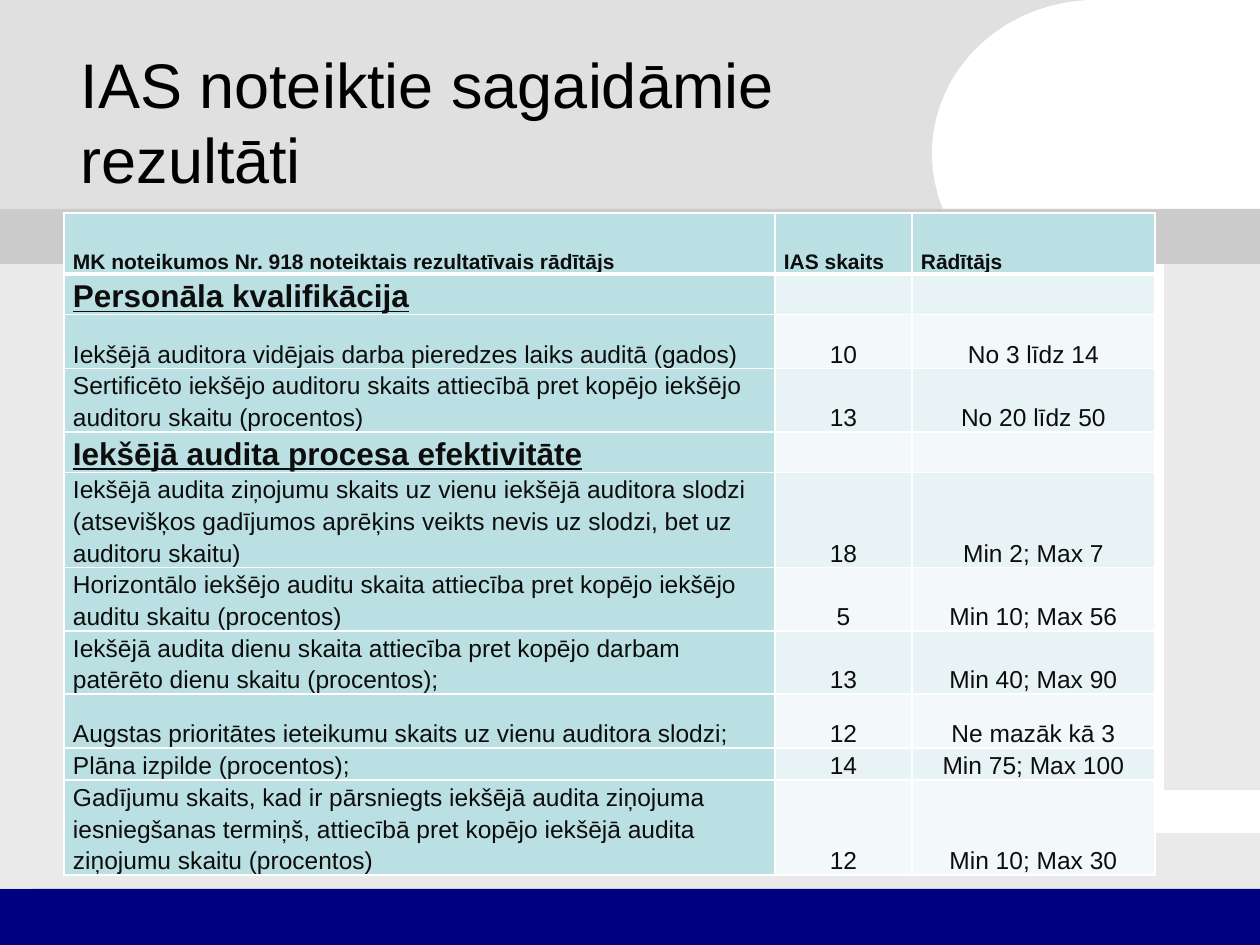
from dataclasses import dataclass

from lxml import etree
from pptx import Presentation
from pptx.dml.color import RGBColor
from pptx.enum.shapes import MSO_SHAPE
from pptx.enum.text import MSO_ANCHOR, MSO_AUTO_SIZE, PP_ALIGN
from pptx.oxml.ns import qn
from pptx.util import Pt

RECTANGLE, ELLIPSE = MSO_SHAPE.RECTANGLE, MSO_SHAPE.OVAL
MIDDLE, BOTTOM = MSO_ANCHOR.MIDDLE, MSO_ANCHOR.BOTTOM
LEFT, CENTER = PP_ALIGN.LEFT, PP_ALIGN.CENTER
NO_AUTOFIT = MSO_AUTO_SIZE.NONE

PIXELS_PER_INCH = 126
SLIDE_BOX = (0, 0, 1260, 945)
TITLE_BOX = (68, 42, 932, 158)
TABLE_BOX = (64, 213, 1091, 661)


@dataclass(frozen=True)
class Theme:
    font: str = "Arial"
    title_size: int = 36
    section_size: int = 18
    body_size: int = 14
    header_size: int = 12
    title: str = "000000"
    text: str = "0D0D0D"
    white: str = "FFFFFF"
    top_panel: str = "E0E0E0"
    side_panel: str = "EAEAEA"
    band: str = "CBCBCB"
    footer: str = "000080"
    label_fill: str = "BBE0E3"
    value_fills: tuple = ("E7F3F4", "F3F9FA")


THEME = Theme()

COLUMN_WIDTHS = [711, 137, 243]
HEADER = ("MK noteikumos Nr. 918 noteiktais rezultatīvais rādītājs", "IAS skaits", "Rādītājs")
HEADER_HEIGHT = 61
# Row height, indicator, number of units, result; a section has only a name
ROWS = [
    (40, "Personāla kvalifikācija", "", ""),
    (54, "Iekšējā auditora vidējais darba pieredzes laiks auditā (gados)", "10", "No 3 līdz 14"),
    (63, "Sertificēto iekšējo auditoru skaits attiecībā pret kopējo iekšējo "
         "auditoru skaitu (procentos)", "13", "No 20 līdz 50"),
    (40, "Iekšējā audita procesa efektivitāte", "", ""),
    (95, "Iekšējā audita ziņojumu skaits uz vienu iekšējā auditora slodzi (atsevišķos "
         "gadījumos aprēķins veikts nevis uz slodzi, bet uz auditoru skaitu)",
     "18", "Min 2; Max 7"),
    (63, "Horizontālo iekšējo auditu skaita attiecība pret kopējo iekšējo "
         "auditu skaitu (procentos)", "5", "Min 10; Max 56"),
    (63, "Iekšējā audita dienu skaita attiecība pret kopējo darbam patērēto "
         "dienu skaitu (procentos);", "13", "Min 40; Max 90"),
    (54, "Augstas prioritātes ieteikumu skaits uz vienu auditora slodzi;",
     "12", "Ne mazāk kā 3"),
    (32, "Plāna izpilde (procentos);", "14", "Min 75; Max 100"),
    (95, "Gadījumu skaits, kad ir pārsniegts iekšējā audita ziņojuma iesniegšanas "
         "termiņš, attiecībā pret kopējo iekšējā audita ziņojumu skaitu (procentos)",
     "12", "Min 10; Max 30"),
]


def px(length):
    return round(length * 914400 / PIXELS_PER_INCH)


def style_runs(paragraph, size, color, bold=False, underline=False):
    for run in paragraph.runs:
        run.font.name = THEME.font
        run.font.size = Pt(size)
        run.font.bold = bold
        run.font.underline = underline
        run.font.color.rgb = RGBColor.from_string(color)


def add_backdrop(slide, box):
    left, top, width, height = box
    panels = [
        (RECTANGLE, 0, 0, 1145, 213, THEME.top_panel),
        (ELLIPSE, 932, 0, 328, 307, THEME.white),
        (RECTANGLE, 0, 264, 70, 624, THEME.side_panel),
        (RECTANGLE, 33, 833, width - 33, 56, THEME.side_panel),
        (RECTANGLE, 0, 889, width, height - 889, THEME.footer),
        (RECTANGLE, 1164, 264, width - 1164, 526, THEME.side_panel),
        (RECTANGLE, 1086, 0, width - 1086, 255, THEME.white),
        (RECTANGLE, 0, 209, width, 55, THEME.band),
    ]
    for kind, x, y, panel_width, panel_height, color in panels:
        shape = slide.shapes.add_shape(
            kind, px(left + x), px(top + y), px(panel_width), px(panel_height))
        shape.shadow.inherit = False
        shape.fill.solid()
        shape.fill.fore_color.rgb = RGBColor.from_string(color)
        shape.line.fill.background()


def place_title(slide, box, text):
    title = slide.shapes.title
    title.left, title.top, title.width, title.height = map(px, box)
    frame = title.text_frame
    frame.text = text
    frame.word_wrap = True
    frame.auto_size = NO_AUTOFIT
    frame.vertical_anchor = MIDDLE
    frame.paragraphs[0].alignment = LEFT
    style_runs(frame.paragraphs[0], THEME.title_size, THEME.title)
    # Bring the title in front of the backdrop
    title.element.getparent().append(title.element)


def set_borders(cell, widths):
    properties = cell._tc.get_or_add_tcPr()
    for side, width in widths.items():
        line = etree.SubElement(properties, qn(f"a:ln{side}"), w=str(Pt(width)))
        fill = etree.SubElement(line, qn("a:solidFill"))
        etree.SubElement(fill, qn("a:srgbClr"), val=THEME.white)


def fill_cell(cell, text, fill, alignment, size, bold, underline, top_line, bottom_line):
    set_borders(cell, {"L": 1, "R": 1, "T": top_line, "B": bottom_line})
    cell.fill.solid()
    cell.fill.fore_color.rgb = RGBColor.from_string(fill)
    cell.margin_left = cell.margin_right = px(9)
    cell.margin_top = cell.margin_bottom = 0
    cell.vertical_anchor = BOTTOM
    if text:
        cell.text_frame.text = text
        paragraph = cell.text_frame.paragraphs[0]
        paragraph.alignment = alignment
        paragraph.line_spacing = 1.15
        style_runs(paragraph, size, THEME.text, bold, underline)


def add_results_table(slide, box):
    table = slide.shapes.add_table(len(ROWS) + 1, len(HEADER), *map(px, box)).table
    table.horz_banding = False
    for column, width in zip(table.columns, COLUMN_WIDTHS):
        column.width = px(width)

    # Header row
    table.rows[0].height = px(HEADER_HEIGHT)
    for column, text in enumerate(HEADER):
        fill_cell(table.cell(0, column), text, THEME.label_fill, LEFT,
                  THEME.header_size, True, False, 1, 3)

    # Sections and indicators
    for row, (height, *texts) in enumerate(ROWS, start=1):
        table.rows[row].height = px(height)
        is_section = not texts[1]
        size = THEME.section_size if is_section else THEME.body_size
        value_fill = THEME.value_fills[(row - 1) % 2]
        for column, text in enumerate(texts):
            fill = value_fill if column else THEME.label_fill
            fill_cell(table.cell(row, column), text, fill, CENTER if column else LEFT,
                      size, is_section, is_section, 3 if row == 1 else 1, 1)


def main():
    presentation = Presentation()
    presentation.slide_width, presentation.slide_height = map(px, SLIDE_BOX[2:])
    slide = presentation.slides.add_slide(presentation.slide_layouts[5])
    add_backdrop(slide, SLIDE_BOX)
    place_title(slide, TITLE_BOX, "IAS noteiktie sagaidāmie rezultāti")
    add_results_table(slide, TABLE_BOX)
    presentation.save("out.pptx")


if __name__ == "__main__":
    main()
